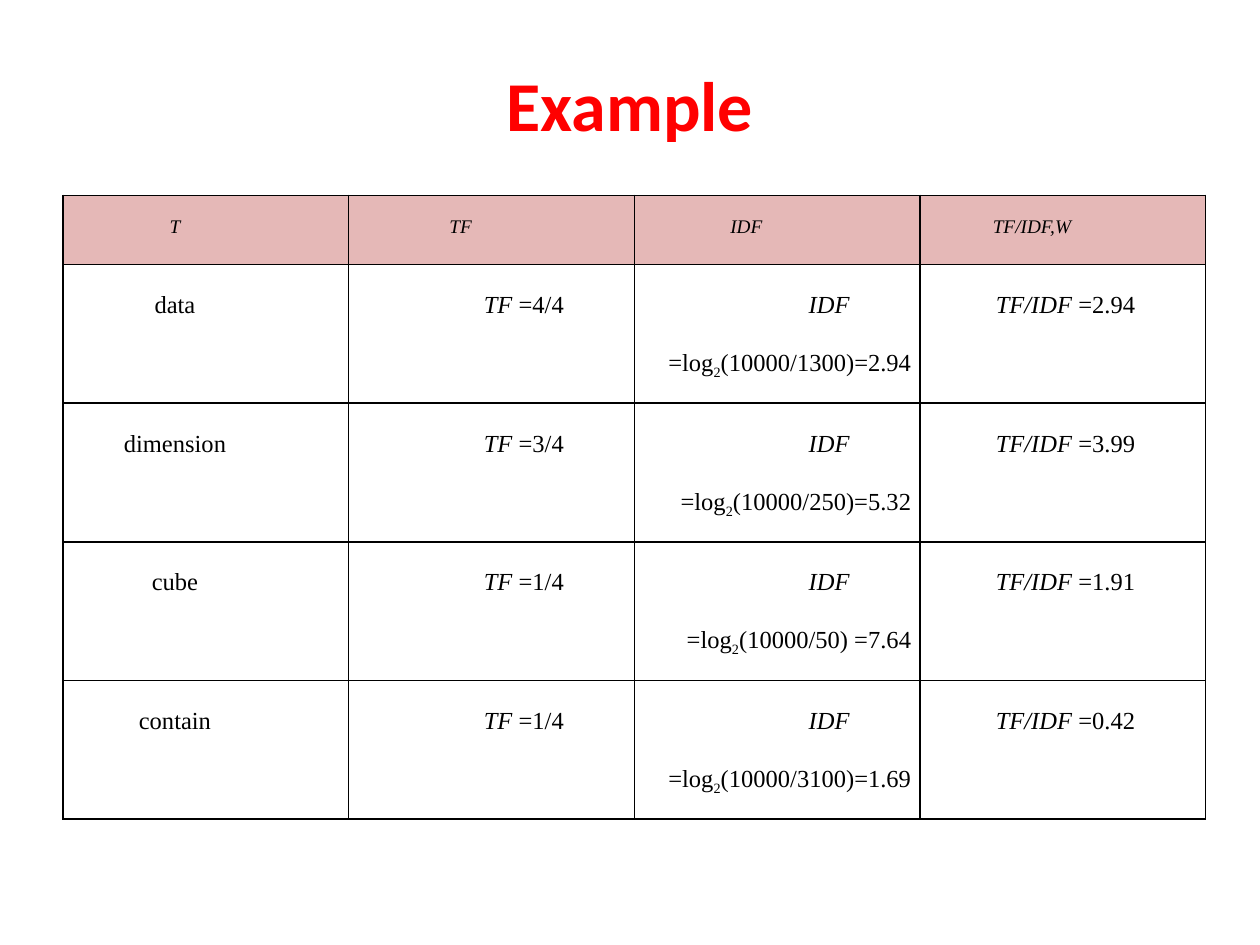
import pptx
import pptx.dml.color
import pptx.enum.text
import pptx.oxml
import pptx.util
from pptx.util import Inches

RED = pptx.dml.color.RGBColor(0xFF, 0x00, 0x00)
BLACK = pptx.dml.color.RGBColor(0x00, 0x00, 0x00)
PINK = pptx.dml.color.RGBColor(0xE5, 0xB8, 0xB7)
ALIGN = pptx.enum.text.PP_ALIGN
NS = "http://schemas.openxmlformats.org/drawingml/2006/main"

HEADERS = ["T", "TF", "IDF", "TF/IDF,W"]
TERMS = [
    ("data", "=4/4", "(10000/1300)=2.94", "=2.94"),
    ("dimension", "=3/4", "(10000/250)=5.32", "=3.99"),
    ("cube", "=1/4", "(10000/50) =7.64", "=1.91"),
    ("contain", "=1/4", "(10000/3100)=1.69", "=0.42"),
]


class SlideBuilder:
    title_font = "Calibri"
    table_font = "Times New Roman"

    def __init__(self, s):
        self.s = s

    def style(self, r, font, size, color, bold=False, italic=False):
        r.font.name = font
        r.font.size = pptx.util.Pt(size)
        r.font.color.rgb = color
        r.font.bold = bold
        r.font.italic = italic

    def title(self, text, left, top, width, height):
        sp = self.s.shapes.add_textbox(left, top, width, height)
        tf = sp.text_frame
        tf.word_wrap = True
        tf.vertical_anchor = pptx.enum.text.MSO_ANCHOR.MIDDLE
        tf.margin_bottom = Inches(0.26)
        p = tf.paragraphs[0]
        p.text = text
        p.alignment = ALIGN.CENTER
        self.style(p.runs[0], self.title_font, 40, RED, bold=True)

    def table(self, rows, left, top, width, heights):
        tbl = self.s.shapes.add_table(
            len(rows), len(rows[0]), left, top, width, sum(heights)).table
        for row, height in zip(tbl.rows, heights):
            row.height = height
        for i, row in enumerate(rows):
            for j, runs in enumerate(row):
                header = i == 0
                align = ALIGN.CENTER if header or j == 0 else ALIGN.JUSTIFY
                self.cell(tbl.cell(i, j), runs, align, 11 if header else 14,
                          PINK if header else None)

    def cell(self, cell, runs, align, size, fill):
        """Fill a right-to-left cell; runs are (text, kind) pairs."""
        cell.margin_left = cell.margin_right = Inches(0.07)
        cell.margin_top = cell.margin_bottom = 0
        self.borders(cell)
        if fill is None:
            cell.fill.background()
        else:
            cell.fill.solid()
            cell.fill.fore_color.rgb = fill
        p = cell.text_frame.paragraphs[0]
        p.alignment = align
        p.line_spacing = 2.0
        pPr = p._p.get_or_add_pPr()
        pPr.set("marL", "0")
        pPr.set("indent", str(Inches(0.49)))
        pPr.set("rtl", "1")
        for text, kind in runs:
            r = p.add_run()
            r.text = text
            self.style(r, self.table_font, size, BLACK, italic=kind == "italic")
            if kind == "sub":
                r._r.get_or_add_rPr().set("baseline", "-25000")

    def borders(self, cell):
        tcPr = cell._tc.get_or_add_tcPr()
        for side in ("lnL", "lnR", "lnT", "lnB"):
            tcPr.append(pptx.oxml.parse_xml(
                f'<a:{side} xmlns:a="{NS}" w="12700"><a:solidFill>'
                f'<a:srgbClr val="{BLACK}"/></a:solidFill></a:{side}>'))


def term_row(term, tf, idf, weight):
    return [
        [(term, "plain")],
        [("TF ", "italic"), (tf, "plain")],
        [("IDF ", "italic"), ("=log", "plain"), ("2", "sub"), (idf, "plain")],
        [("TF/IDF ", "italic"), (weight, "plain")],
    ]


def main():
    prs = pptx.Presentation()
    prs.slide_width, prs.slide_height = Inches(10), Inches(7.5)
    b = SlideBuilder(prs.slides.add_slide(prs.slide_layouts[6]))
    b.title("Example", Inches(0.5), Inches(0.3), Inches(9), Inches(1.25))
    rows = [[[(h, "italic")] for h in HEADERS]]
    rows += [term_row(*t) for t in TERMS]
    heights = [Inches(0.55)] + [Inches(1.1)] * len(TERMS)
    b.table(rows, Inches(0.5), Inches(1.55), Inches(9.07), heights)
    prs.save("out.pptx")


if __name__ == "__main__":
    main()
